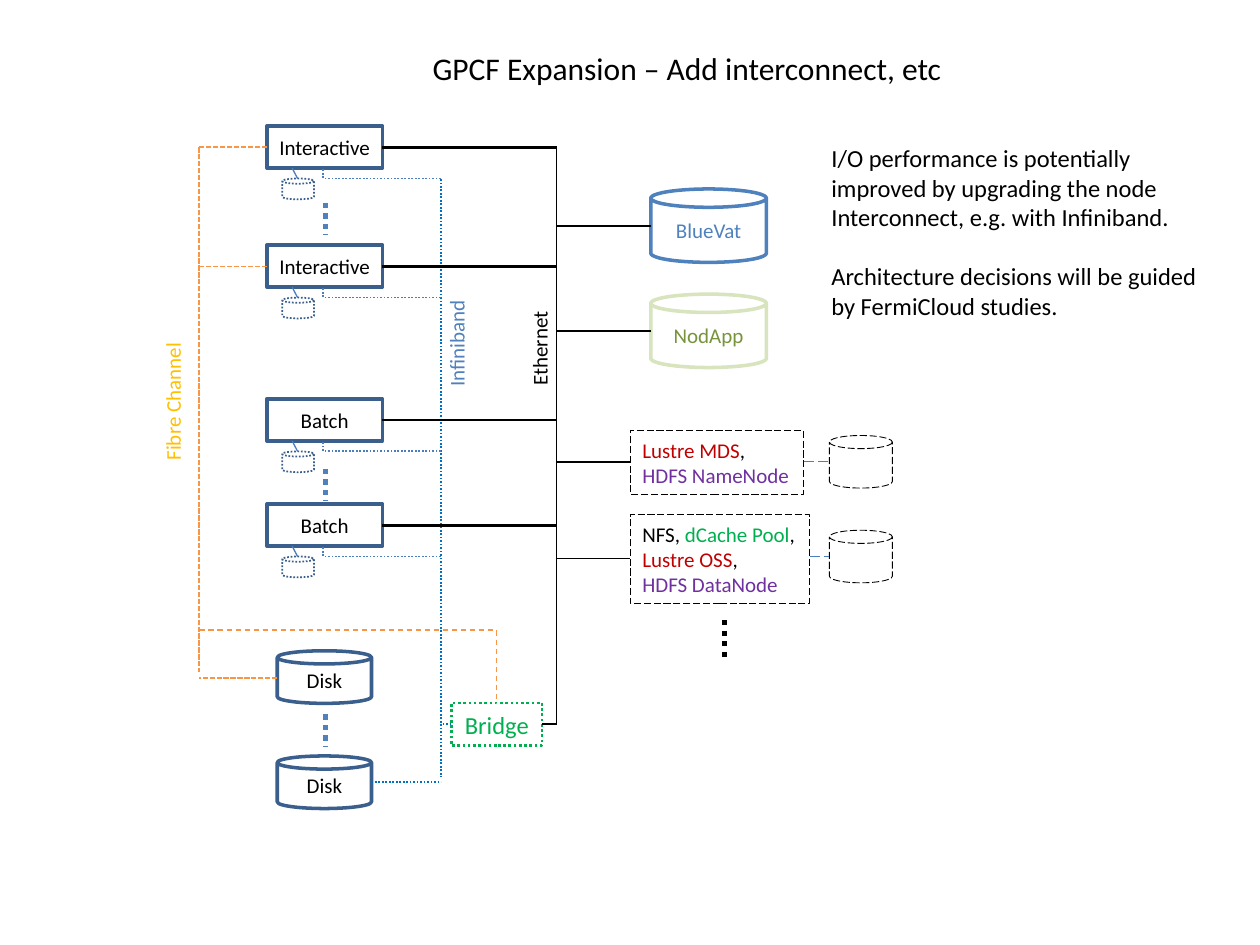
from dataclasses import dataclass

from lxml.etree import SubElement
from pptx import Presentation
from pptx.dml.color import RGBColor
from pptx.enum.dml import MSO_LINE_DASH_STYLE as Dash
from pptx.enum.shapes import MSO_CONNECTOR as Connector, MSO_SHAPE as Shape
from pptx.enum.text import MSO_ANCHOR as Anchor, PP_ALIGN as Align
from pptx.oxml.ns import qn
from pptx.util import Cm, Pt


@dataclass(frozen=True)
class Theme:
    font: str = "Calibri"
    title: float = 18
    body: float = 14
    label: float = 12
    black: str = "000000"
    node: str = "3A5F8C"
    link: str = "4B7EBC"
    blue: str = "4F81BD"
    infiniband: str = "0070C0"
    fibre: str = "F79646"
    amber: str = "FFC000"
    green: str = "00B050"
    red: str = "C00000"
    purple: str = "7030A0"
    olive: str = "77933C"
    pale_olive: str = "D7E4BD"


THEME = Theme()
DOT, SHORT_DASH, LONG_DASH = Dash.ROUND_DOT, Dash.SQUARE_DOT, Dash.LONG_DASH

# Horizontal positions of the three buses and of the node column, in cm
FIBRE_X, INFINIBAND_X, ETHERNET_X = 4.02, 8.89, 11.22
NODE_X, NODE_WIDTH, NODE_HEIGHT = 5.38, 2.33, 0.85
NODE_CENTRE = 6.56
DISK_X, DISK_WIDTH, DISK_HEIGHT = 5.59, 1.9, 1.06
SERVER_X, SERVER_DISK_X = 12.7, 16.72


def set_line(line, color, width, dash=None):
    line.color.rgb = RGBColor.from_string(color)
    line.width = Pt(width)
    if dash is not None:
        line.dash_style = dash


def write(frame, paragraphs, size, align=Align.LEFT, inset=0.25):
    """Fill a frame; each paragraph is a list of (text, colour) runs."""
    frame.word_wrap = False
    frame.vertical_anchor = Anchor.MIDDLE
    frame.margin_left = frame.margin_right = Cm(inset)
    frame.margin_top = frame.margin_bottom = Cm(0)
    for index, runs in enumerate(paragraphs):
        paragraph = frame.add_paragraph() if index else frame.paragraphs[0]
        paragraph.alignment = align
        paragraph.font.name = THEME.font
        paragraph.font.size = Pt(size)
        for text, color in runs:
            run = paragraph.add_run()
            run.text = text
            run.font.color.rgb = RGBColor.from_string(color)


def add_line(slide, start, end, color, width=1, dash=None, bent=False):
    """Draw a straight line, or one that runs level and then turns once."""
    kind = Connector.ELBOW if bent else Connector.STRAIGHT
    connector = slide.shapes.add_connector(kind, *map(Cm, start + end))
    set_line(connector.line, color, width, dash)
    properties = connector._element.spPr
    if bent:
        properties.find(qn("a:prstGeom")).set("prst", "bentConnector2")
    SubElement(properties, qn("a:effectLst"))


def add_outline(slide, kind, box, color, width, dash=None):
    shape = slide.shapes.add_shape(kind, *map(Cm, box))
    shape.shadow.inherit = False
    shape.fill.background()
    set_line(shape.line, color, width, dash)
    return shape


def add_labelled(slide, kind, box, text, color, line_color, width=2,
                 dash=None, size=THEME.label):
    shape = add_outline(slide, kind, box, line_color, width, dash)
    write(shape.text_frame, [[(text, color)]], size, Align.CENTER, inset=0)


def add_ellipsis(slide, x, top, length, color):
    add_line(slide, (x, top), (x, top + length), color, 3, DOT)


def add_vertical_label(slide, box, text, color):
    frame = slide.shapes.add_textbox(*map(Cm, box)).text_frame
    write(frame, [[(text, color)]], THEME.label, Align.CENTER, inset=0)
    frame._element.find(qn("a:bodyPr")).set("vert", "vert270")


def add_node(slide, top, name, on_fibre):
    """Draw a compute node with its local disk and its bus links."""
    middle, bottom, disk_top = top + 0.43, top + NODE_HEIGHT, top + 1.06
    add_labelled(slide, Shape.RECTANGLE, (NODE_X, top, NODE_WIDTH, NODE_HEIGHT),
                 name, THEME.black, THEME.node)
    add_outline(slide, Shape.CAN, (5.69, disk_top, 0.64, 0.42), THEME.node, 1, DOT)
    add_line(slide, (6, disk_top), (5.89, bottom), THEME.link, 0.75)
    add_line(slide, (INFINIBAND_X, disk_top), (6.52, bottom), THEME.link, 1, DOT, bent=True)
    add_line(slide, (NODE_X + NODE_WIDTH, middle), (ETHERNET_X, middle), THEME.black, 1.5)
    if on_fibre:
        add_line(slide, (NODE_X, middle), (FIBRE_X, middle), THEME.fibre, 1, SHORT_DASH)


def add_storage(slide, top, name, color, line_color):
    add_labelled(slide, Shape.CAN, (13.12, top, 2.33, 1.48), name, color, line_color)
    add_line(slide, (13.12, top + 0.74), (ETHERNET_X, top + 0.74), THEME.black)


def add_server(slide, top, width, height, middle, disk_top, paragraphs):
    """Draw a file server box with its disk and its Ethernet link."""
    box = add_outline(slide, Shape.RECTANGLE, (SERVER_X, top, width, height),
                      THEME.black, 0.5, LONG_DASH)
    write(box.text_frame, paragraphs, THEME.label)
    add_outline(slide, Shape.CAN, (SERVER_DISK_X, disk_top, 1.27, 1.06),
                THEME.black, 0.5, LONG_DASH)
    disk_middle = disk_top + 0.53
    add_line(slide, (SERVER_X + width, disk_middle), (SERVER_DISK_X, disk_middle),
             THEME.link, 0.75, LONG_DASH)
    add_line(slide, (SERVER_X, middle), (ETHERNET_X, middle), THEME.black)


def add_buses(slide):
    add_line(slide, (ETHERNET_X, 2.97), (ETHERNET_X, 14.6), THEME.black)
    add_line(slide, (INFINIBAND_X, 3.61), (INFINIBAND_X, 15.67), THEME.infiniband, 1, DOT)
    add_line(slide, (FIBRE_X, 2.97), (FIBRE_X, 13.54), THEME.fibre, 1, SHORT_DASH)
    add_vertical_label(slide, (10.36, 6.15, 1.02, 1.75), "Ethernet", THEME.black)
    add_vertical_label(slide, (8.69, 5.92, 1.02, 2.01), "Infiniband", THEME.blue)
    add_vertical_label(slide, (2.97, 6.78, 1.02, 2.64), "Fibre Channel", THEME.amber)


def add_disks(slide):
    for top in (13.12, 15.24):
        add_labelled(slide, Shape.CAN, (DISK_X, top, DISK_WIDTH, DISK_HEIGHT),
                     "Disk", THEME.black, THEME.node)
    add_line(slide, (DISK_X, 13.67), (FIBRE_X, 13.67), THEME.fibre, 1, SHORT_DASH)
    add_line(slide, (DISK_X + DISK_WIDTH, 15.77), (INFINIBAND_X, 15.77),
             THEME.infiniband, 1, DOT)


def add_bridge(slide):
    left, top, width, height = box = (9.1, 14.17, 1.83, 0.86)
    middle = top + height / 2
    add_labelled(slide, Shape.RECTANGLE, box, "Bridge", THEME.green, THEME.green,
                 1.5, DOT, THEME.body)
    add_line(slide, (left + width, middle), (ETHERNET_X, middle), THEME.black)
    add_line(slide, (left, middle), (INFINIBAND_X, middle), THEME.infiniband, 1, DOT)
    add_line(slide, (FIBRE_X, 12.7), (left + width / 2, top), THEME.fibre, 0.75,
             Dash.DASH, bent=True)


def add_title(slide):
    title = slide.shapes.title
    title.left, title.top, title.width, title.height = map(Cm, (8.47, 0.85, 10.9, 1.02))
    write(title.text_frame, [[("GPCF Expansion – Add interconnect, etc", THEME.black)]],
          THEME.title)


def add_remarks(slide):
    lines = ("I/O performance is potentially",
             "improved by upgrading the node",
             "Interconnect, e.g. with Infiniband.",
             "Architecture decisions will be guided",
             "by FermiCloud studies.")
    frame = slide.shapes.add_textbox(Cm(16.51), Cm(2.75), Cm(7.95), Cm(3.84)).text_frame
    write(frame, [[(line, THEME.black)] for line in lines], THEME.body)
    frame.paragraphs[3].space_before = Pt(17)


def main():
    presentation = Presentation()
    presentation.slide_width, presentation.slide_height = Cm(25.4), Cm(19.05)
    slide = presentation.slides.add_slide(presentation.slide_layouts[5])
    add_title(slide)
    add_buses(slide)
    for top, name in ((2.54, "Interactive"), (4.94, "Interactive"),
                      (8.04, "Batch"), (10.16, "Batch")):
        add_node(slide, top, name, on_fibre=name == "Interactive")
    add_disks(slide)
    for top in (4.09, 9.45, 14.4):
        add_ellipsis(slide, NODE_CENTRE, top, 0.64, THEME.blue)
    add_bridge(slide)
    add_storage(slide, 3.81, "BlueVat", THEME.blue, THEME.blue)
    add_storage(slide, 5.93, "NodApp", THEME.olive, THEME.pale_olive)
    comma = (",", THEME.black)
    add_server(slide, 8.68, 3.5, 1.28, 9.31, 8.78, [
        [("Lustre MDS", THEME.red), comma],
        [("HDFS NameNode", THEME.purple)]])
    add_server(slide, 10.37, 3.62, 1.8, 11.26, 10.69, [
        [("NFS, ", THEME.black), ("dCache Pool", THEME.green), comma],
        [("Lustre OSS", THEME.red), comma],
        [("HDFS DataNode", THEME.purple)]])
    add_ellipsis(slide, 14.61, 12.5, 0.84, THEME.black)
    add_remarks(slide)
    presentation.save("out.pptx")


if __name__ == "__main__":
    main()
